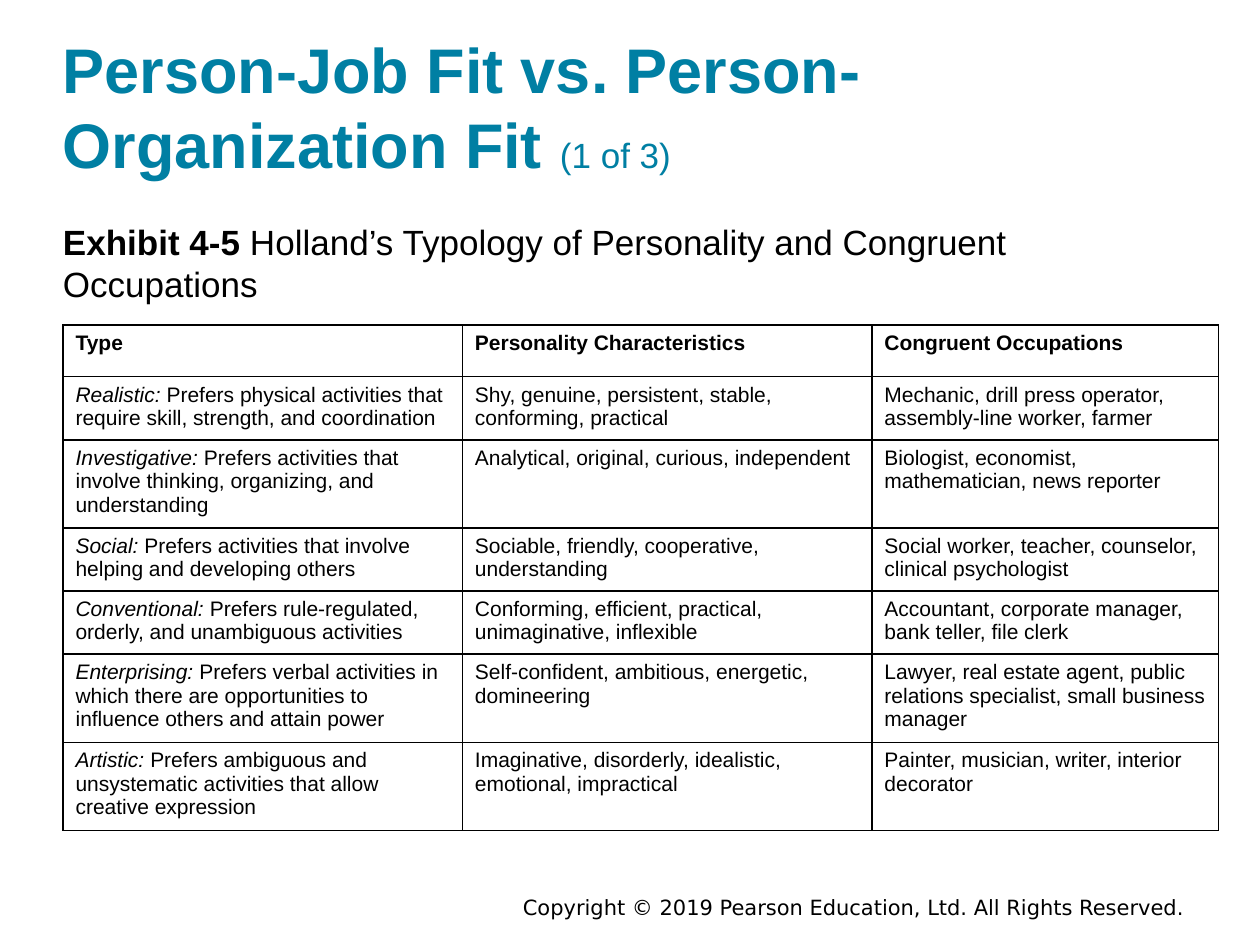
from pptx import Presentation
from pptx.dml.color import RGBColor
from pptx.enum.text import MSO_ANCHOR as Anchor, PP_ALIGN as Align
from pptx.oxml import parse_xml
from pptx.oxml.ns import nsdecls
from pptx.util import Inches, Pt

BLACK = "000000"
TEAL = "007FA3"

HEADINGS = ["Type", "Personality Characteristics", "Congruent Occupations"]
TYPES = [
    ("Realistic: ", "Prefers physical activities that require skill, strength, and coordination",
     "Shy, genuine, persistent, stable, conforming, practical",
     "Mechanic, drill press operator, assembly-line worker, farmer"),
    ("Investigative: ", "Prefers activities that involve thinking, organizing, and understanding",
     "Analytical, original, curious, independent",
     "Biologist, economist, mathematician, news reporter"),
    ("Social: ", "Prefers activities that involve helping and developing others",
     "Sociable, friendly, cooperative, understanding",
     "Social worker, teacher, counselor, clinical psychologist"),
    ("Conventional: ", "Prefers rule-regulated, orderly, and unambiguous activities",
     "Conforming, efficient, practical, unimaginative, inflexible",
     "Accountant, corporate manager, bank teller, file clerk"),
    ("Enterprising: ", "Prefers verbal activities in which there are opportunities "
     "to influence others and attain power",
     "Self-confident, ambitious, energetic, domineering",
     "Lawyer, real estate agent, public relations specialist, small business manager"),
    ("Artistic: ", "Prefers ambiguous and unsystematic activities that allow creative expression",
     "Imaginative, disorderly, idealistic, emotional, impractical",
     "Painter, musician, writer, interior decorator"),
]
COLUMN_WIDTHS = [3.17, 3.25, 2.75]
ROW_HEIGHT = 0.41


def rgb(color):
    return RGBColor.from_string(color)


def add_text(paragraph, text, size=12, color=BLACK, font="Arial", bold=False, italic=False):
    run = paragraph.add_run()
    run.text = text
    run.font.size = Pt(size)
    run.font.name = font
    run.font.color.rgb = rgb(color)
    run.font.bold = bold
    run.font.italic = italic


def add_box(slide, left, top, width, height, anchor=Anchor.TOP, inset=0, align=Align.LEFT):
    """Add a wrapping text box and return its first paragraph."""
    shape = slide.shapes.add_textbox(Inches(left), Inches(top), Inches(width), Inches(height))
    frame = shape.text_frame
    frame.word_wrap = True
    frame.vertical_anchor = anchor
    frame.margin_left = frame.margin_right = Inches(inset)
    frame.margin_top = frame.margin_bottom = Inches(inset / 2)
    paragraph = frame.paragraphs[0]
    paragraph.alignment = align
    return paragraph


def set_borders(cell, color=BLACK, width=1):
    properties = cell._tc.get_or_add_tcPr()
    for index, side in enumerate(("lnL", "lnR", "lnT", "lnB")):
        properties.insert(index, parse_xml(
            f'<a:{side} {nsdecls("a")} w="{Pt(width)}"><a:solidFill>'
            f'<a:srgbClr val="{color}"/></a:solidFill></a:{side}>'))


def add_typology_table(slide, left, top):
    row_count = len(TYPES) + 1
    table = slide.shapes.add_table(
        row_count, len(HEADINGS), Inches(left), Inches(top),
        Inches(sum(COLUMN_WIDTHS)), Inches(ROW_HEIGHT * row_count)).table
    table.horz_banding = False
    for column, width in zip(table.columns, COLUMN_WIDTHS):
        column.width = Inches(width)
    for row in table.rows:
        row.height = Inches(ROW_HEIGHT)
    for cell in table.iter_cells():
        cell.fill.background()
        set_borders(cell)

    # Header row
    for column, heading in enumerate(HEADINGS):
        add_text(table.cell(0, column).text_frame.paragraphs[0], heading, bold=True)

    # One row per personality type
    for row, (name, preference, *details) in enumerate(TYPES, start=1):
        paragraph = table.cell(row, 0).text_frame.paragraphs[0]
        add_text(paragraph, name, italic=True)
        add_text(paragraph, preference)
        for column, detail in enumerate(details, start=1):
            add_text(table.cell(row, column).text_frame.paragraphs[0], detail)


def main():
    presentation = Presentation()
    presentation.slide_width = Inches(10)
    presentation.slide_height = Inches(7.5)
    slide = presentation.slides.add_slide(presentation.slide_layouts[6])

    # Copyright line
    footer = add_box(slide, 2, 7.05, 7.5, 0.3, Anchor.MIDDLE, inset=0.1, align=Align.RIGHT)
    add_text(footer, "Copyright © 2019 Pearson Education, Ltd. All Rights Reserved.",
             font="DejaVu Sans")

    # Title
    title = add_box(slide, 0.5, 0.24, 9, 1.2, Anchor.BOTTOM)
    add_text(title, "Person-Job Fit vs. Person-Organization Fit ", size=36, color=TEAL, bold=True)
    add_text(title, "(1 of 3)", size=20, color=TEAL)

    # Exhibit caption
    caption = add_box(slide, 0.5, 1.75, 9, 0.75)
    add_text(caption, "Exhibit 4-5", size=20, bold=True)
    add_text(caption, " Holland’s Typology of Personality and Congruent Occupations", size=20)

    # Typology table
    add_typology_table(slide, 0.5, 2.58)

    presentation.save("out.pptx")


if __name__ == "__main__":
    main()
